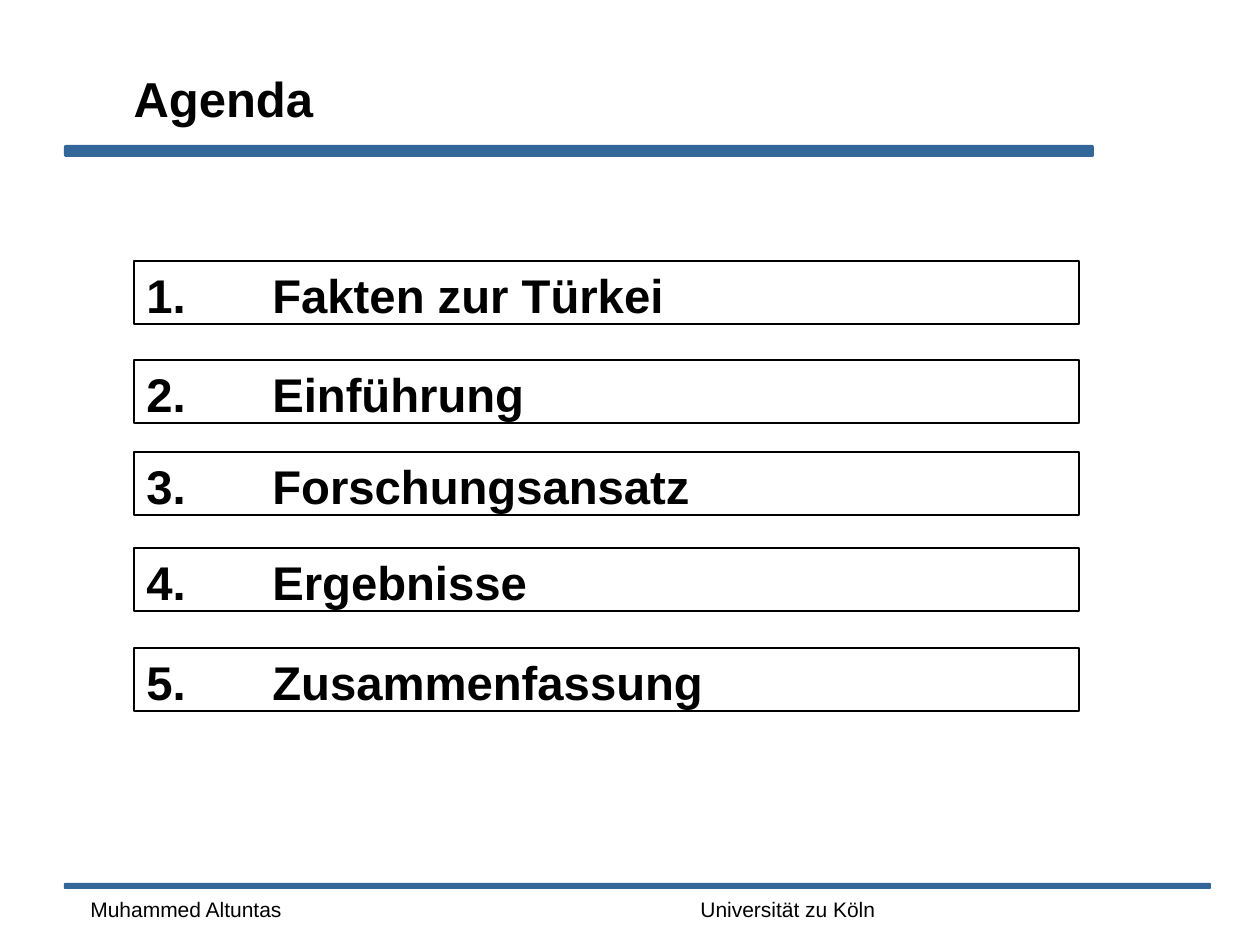
from pptx import Presentation
from pptx.dml.color import RGBColor
from pptx.enum import shapes, text
from pptx.oxml.ns import qn
from lxml import etree

BLACK = RGBColor(0, 0, 0)
BLUE = RGBColor(0x33, 0x66, 0x99)


class Deck:
    font = "Arial"
    scale = 914400 / 126

    def __init__(self, width, height):
        self.prs = Presentation()
        self.prs.slide_width, self.prs.slide_height = self.emu(width, height)
        self.slide = self.prs.slides.add_slide(self.prs.slide_layouts[5])

    def emu(self, *lengths):
        return [round(n * self.scale) for n in lengths]

    def set_text(self, sp, words, size, bold=False, tab=None):
        tf = sp.text_frame
        tf.word_wrap = True
        tf.text = words
        p = tf.paragraphs[0]
        p.alignment = text.PP_ALIGN.LEFT
        if tab:
            tabs = etree.SubElement(p._p.get_or_add_pPr(), qn("a:tabLst"))
            pos = str(self.emu(tab)[0])
            etree.SubElement(tabs, qn("a:tab"), pos=pos, algn="l")
        f = p.font
        f.name, f.bold = self.font, bold
        f.size = size * 12700
        f.color.rgb = BLACK
        return tf

    def title(self, words, *box):
        sp = self.slide.shapes.title
        sp.left, sp.top, sp.width, sp.height = self.emu(*box)
        tf = self.set_text(sp, words, 28, bold=True)
        tf.vertical_anchor = text.MSO_ANCHOR.MIDDLE

    def bar(self, *box):
        sp = self.slide.shapes.add_shape(
            shapes.MSO_SHAPE.ROUNDED_RECTANGLE, *self.emu(*box))
        sp.shadow.inherit = False
        sp.fill.solid()
        sp.fill.fore_color.rgb = BLUE
        sp.line.fill.background()

    def agenda_item(self, words, *box):
        sp = self.slide.shapes.add_shape(
            shapes.MSO_SHAPE.RECTANGLE, *self.emu(*box))
        sp.shadow.inherit = False
        sp.fill.background()
        sp.line.color.rgb = BLACK
        sp.line.width = 9525
        tf = self.set_text(sp, words, 27, bold=True, tab=126)
        tf.vertical_anchor = text.MSO_ANCHOR.MIDDLE
        tf.margin_top, tf.margin_bottom = self.emu(4, 0)

    def label(self, words, *box):
        sp = self.slide.shapes.add_textbox(*self.emu(*box))
        self.set_text(sp, words, 12)


def main():
    deck = Deck(1260, 945)
    deck.bar(64, 145, 1030, 12)
    deck.bar(64, 883, 1147, 6)
    deck.label("Universität zu Köln", 688, 890, 399, 37)
    deck.label("Muhammed Altuntas", 78, 890, 294, 37)
    deck.title("Agenda", 121, 19, 1134, 158)
    items = [
        ("Fakten zur Türkei", 261),
        ("Einführung", 360),
        ("Forschungsansatz", 452),
        ("Ergebnisse", 548),
        ("Zusammenfassung", 648),
    ]
    for number, (topic, top) in enumerate(items, 1):
        deck.agenda_item(f"{number}.\t{topic}", 134, top, 945, 63)
    deck.prs.save("out.pptx")


if __name__ == "__main__":
    main()
